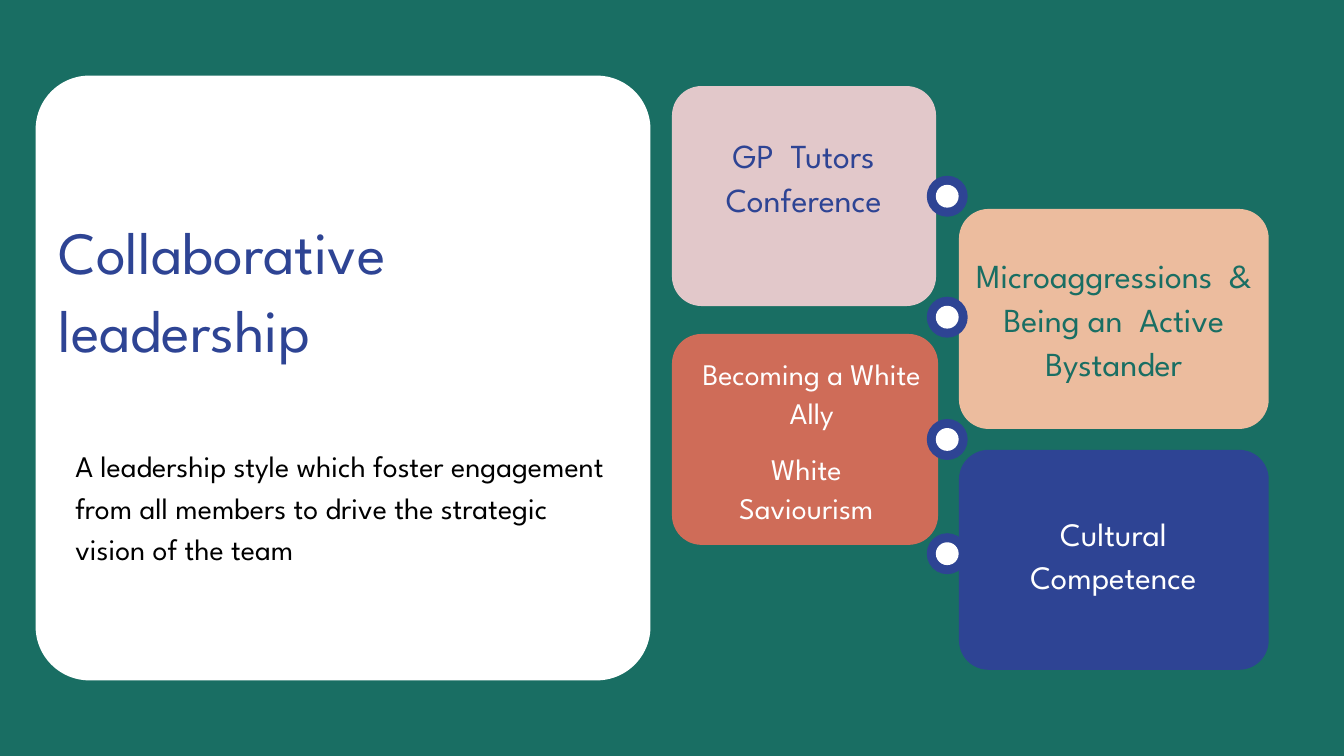
from pptx import Presentation
from pptx.dml.color import RGBColor
from pptx.enum.shapes import MSO_SHAPE
from pptx.enum.text import MSO_ANCHOR, MSO_AUTO_SIZE, PP_ALIGN
from pptx.oxml.ns import qn
from pptx.util import Inches, Pt

WIDTH, HEIGHT = Inches(20), Inches(11.25)
FONT = "League Spartan"
GREEN, BLUE, WHITE, BLACK = "196E63", "2E4494", "FFFFFF", "000000"
PINK, PEACH, CORAL = "E2C8CA", "ECBC9E", "CF6C58"

TILES = [
    (71.35, 59.5, 23.05, 29.1, BLUE),
    (50, 11.38, 19.65, 29.1, PINK),
    (71.35, 27.64, 23.05, 29.1, PEACH),
    (50, 44.18, 19.8, 27.9, CORAL),
]
LABELS = [
    ("GP  Tutors Conference", (51.8, 17.42, 16, 11.29), 36, BLUE),
    ("Becoming a White Ally", (51, 46.67, 18.8, 10.04), 32, WHITE),
    ("White Saviourism", (52.15, 59.2, 15.7, 10.04), 32, WHITE),
    ("Microaggressions  & Being an  Active Bystander",
     (71.35, 33.33, 23.05, 17.07), 36, GREEN),
    ("Cultural Competence", (72.85, 67.56, 20, 10.93), 35, WHITE),
]
RING_X, RING_ROWS = 70.48, (25.96, 41.96, 58.13, 73.24)


def rgb(value):
    """Turn a hex string into a colour."""
    return RGBColor.from_string(value)


def across(share):
    """Length of a percentage of the slide width."""
    return int(WIDTH * share / 100)


def down(share):
    """Length of a percentage of the slide height."""
    return int(HEIGHT * share / 100)


def box(x, y, w, h):
    """Turn a box in slide percentages into lengths."""
    return across(x), down(y), across(w), down(h)


def paint(sp, color):
    """Give a shape a flat fill with no line or shadow."""
    sp.shadow.inherit = False
    sp.fill.solid()
    sp.fill.fore_color.rgb = rgb(color)
    sp.line.fill.background()


def add_tile(s, x, y, w, h, color, radius=Inches(0.44)):
    """Add a rounded tile with a fixed corner radius."""
    sp = s.shapes.add_shape(MSO_SHAPE.ROUNDED_RECTANGLE, *box(x, y, w, h))
    sp.adjustments[0] = radius / min(sp.width, sp.height)
    paint(sp, color)


def add_ring(s, x, y):
    """Add a blue ring with a white centre around a point."""
    for share, color in ((3.05, BLUE), (1.7, WHITE)):
        size = across(share)
        sp = s.shapes.add_shape(MSO_SHAPE.OVAL, across(x) - size // 2,
                                down(y) - size // 2, size, size)
        paint(sp, color)


def set_text(sp, text, size, color, align=PP_ALIGN.CENTER, leading=1.3):
    """Write one formatted paragraph into a shape."""
    tf = sp.text_frame
    tf.text = text
    tf.word_wrap = True
    tf.auto_size = MSO_AUTO_SIZE.NONE
    tf.vertical_anchor = MSO_ANCHOR.TOP
    tf.margin_left = tf.margin_right = tf.margin_top = tf.margin_bottom = 0
    p = tf.paragraphs[0]
    p.alignment = align
    p.line_spacing = Pt(size * leading)
    p.space_before = Pt(0)
    font = p.runs[0].font
    font.name, font.size, font.color.rgb = FONT, Pt(size), rgb(color)


def add_label(s, text, area, size, color):
    """Add a centred text box."""
    set_text(s.shapes.add_textbox(*box(*area)), text, size, color)


def fill_placeholder(s, sp, text, area, size, color, leading):
    """Place a left-aligned placeholder in front, without a bullet."""
    sp.left, sp.top, sp.width, sp.height = box(*area)
    set_text(sp, text, size, color, PP_ALIGN.LEFT, leading)
    pPr = sp.text_frame.paragraphs[0]._p.get_or_add_pPr()
    pPr.set("marL", "0")
    pPr.set("indent", "0")
    pPr.append(pPr.makeelement(qn("a:buNone"), {}))
    s.shapes.element.append(sp.element)


def main():
    """Build the slide and save it."""
    prs = Presentation()
    prs.slide_width, prs.slide_height = WIDTH, HEIGHT
    s = prs.slides.add_slide(prs.slide_layouts[1])
    title, body = s.placeholders
    s.background.fill.solid()
    s.background.fill.fore_color.rgb = rgb(GREEN)

    for tile in TILES:
        add_tile(s, *tile)
    for y in RING_ROWS:
        add_ring(s, RING_X, y)
    for label in LABELS:
        add_label(s, *label)

    add_tile(s, 2.65, 10, 45.75, 80, WHITE, Inches(0.8))
    fill_placeholder(s, title, "Collaborative leadership",
                     (4.35, 27.64, 41.55, 20.71), 64, BLUE, 1.3)
    fill_placeholder(s, body, "A leadership style which foster engagement from "
                     "all members to drive the strategic vision of the team",
                     (5.6, 58.4, 40.3, 16.62), 32, BLACK, 1.4)
    prs.save("out.pptx")


if __name__ == "__main__":
    main()
